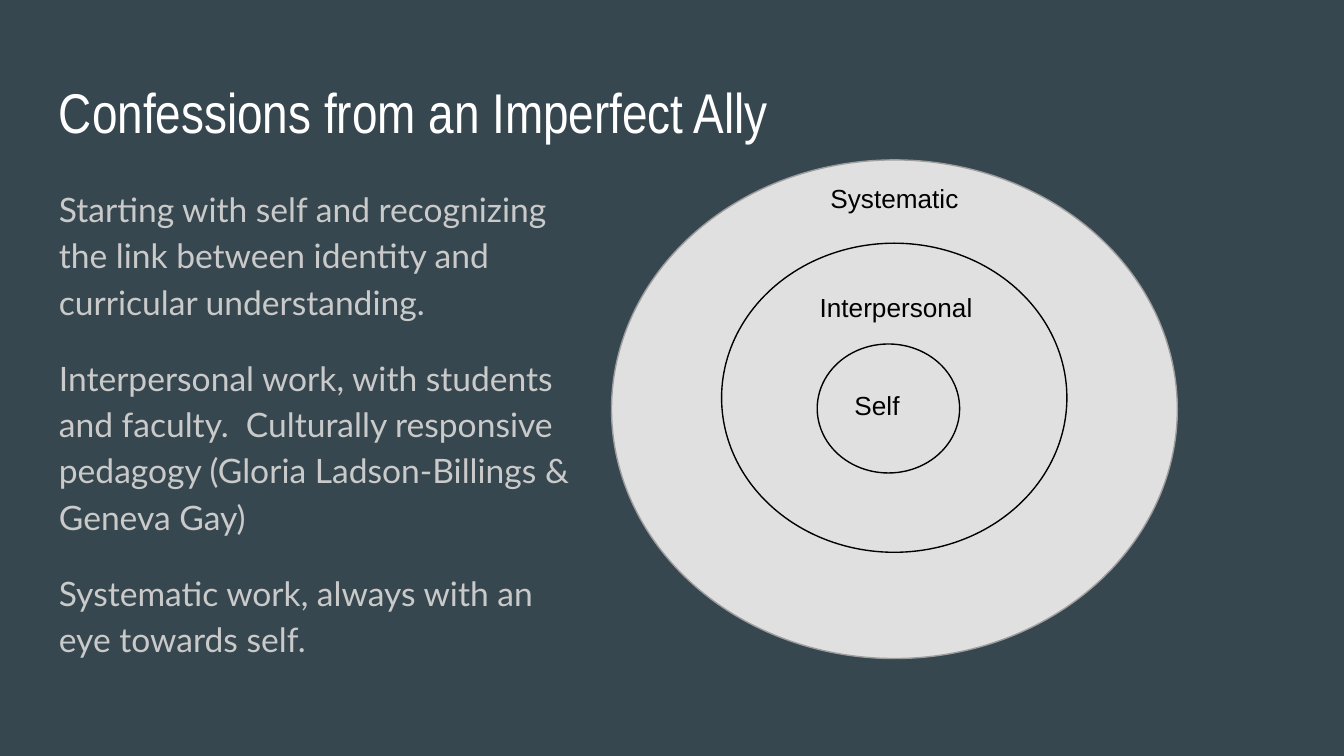
from dataclasses import dataclass

from pptx import Presentation, util as u
from pptx.dml.color import RGBColor
from pptx.enum import shapes, text

COLOURS = {
    "background": "37474F",
    "title": "FFFFFF",
    "body": "CACACA",
    "disc": "E0E0E0",
    "rim": "9E9E9E",
    "ink": "000000",
}
INSET = 7.2


@dataclass(frozen=True)
class Frame:
    left: float
    top: float
    width: float
    height: float

    def lengths(self) -> list[u.Length]:
        return [u.Pt(v) for v in (self.left, self.top, self.width, self.height)]


@dataclass(frozen=True)
class Ring:
    frame: Frame
    line: str


@dataclass(frozen=True)
class Label:
    wording: str
    frame: Frame


def colour(name: str) -> RGBColor:
    return RGBColor.from_string(COLOURS[name])


def add_text(slide, frame: Frame, *paragraphs: str, font: str = "Arial",
             size: float = 14, ink: str = "ink", spacing: float = 1.0,
             after: float = 0) -> None:
    box = slide.shapes.add_textbox(*frame.lengths())
    body = box.text_frame
    body.word_wrap = True
    body.vertical_anchor = text.MSO_ANCHOR.TOP
    body.margin_left = body.margin_right = u.Pt(INSET)
    body.margin_top = body.margin_bottom = u.Pt(INSET)
    for index, wording in enumerate(paragraphs):
        para = body.add_paragraph() if index else body.paragraphs[0]
        para.line_spacing = spacing
        para.space_after = u.Pt(after)
        span = para.add_run()
        span.text = wording
        span.font.name = font
        span.font.size = u.Pt(size)
        span.font.color.rgb = colour(ink)


def add_ring(slide, ring: Ring) -> None:
    oval = slide.shapes.add_shape(shapes.MSO_SHAPE.OVAL, *ring.frame.lengths())
    oval.shadow.inherit = False
    oval.fill.solid()
    oval.fill.fore_color.rgb = colour("disc")
    oval.line.color.rgb = colour(ring.line)
    oval.line.width = u.Pt(0.75)


# Rings from the outermost to the innermost
RINGS = [
    Ring(Frame(327.6, 85.7, 303.1, 267.1), "rim"),
    Ring(Frame(386.6, 130.3, 185, 165.6), "ink"),
    Ring(Frame(437.8, 184.3, 76.3, 69.1), "ink"),
]
LABELS = [
    Label("Self", Frame(450.7, 201.6, 45.4, 35.3)),
    Label("Interpersonal", Frame(432, 149, 111.6, 42.5)),
    Label("Systematic", Frame(437.8, 90.7, 127.4, 35.3)),
]
COMMITMENTS = [
    "Starting with self and recognizing the link between identity and "
    "curricular understanding.",
    "Interpersonal work, with students and faculty.  Culturally responsive "
    "pedagogy (Gloria Ladson-Billings & Geneva Gay)",
    "Systematic work, always with an eye towards self.",
]


def main() -> None:
    deck = Presentation()
    deck.slide_width, deck.slide_height = u.Pt(720), u.Pt(405)
    page = deck.slides.add_slide(deck.slide_layouts[6])
    page.background.fill.solid()
    page.background.fill.fore_color.rgb = colour("background")

    # Title and commitments
    add_text(page, Frame(24.5, 34.6, 671, 45.4),
             "Confessions from an Imperfect Ally",
             font="Arial Narrow", size=30, ink="title")
    add_text(page, Frame(24.5, 90.7, 289.5, 293), *COMMITMENTS,
             font="Lato", size=18, ink="body", spacing=1.15, after=16)

    # Nested circles with their labels
    for ring in RINGS:
        add_ring(page, ring)
    for label in LABELS:
        add_text(page, label.frame, label.wording)

    deck.save("out.pptx")


if __name__ == "__main__":
    main()
